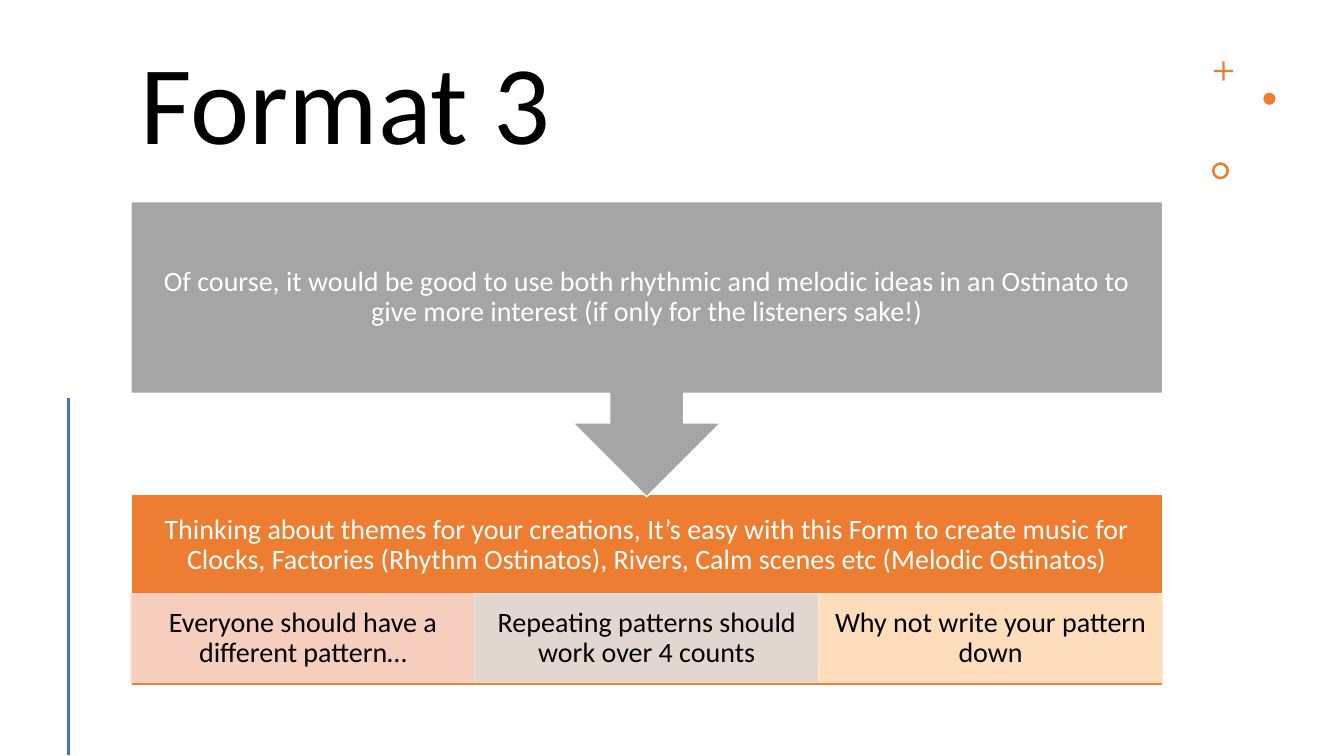
from lxml import etree
from pptx import Presentation
from pptx.dml.color import RGBColor
from pptx.enum.shapes import MSO_CONNECTOR, MSO_SHAPE as Preset
from pptx.enum.text import MSO_ANCHOR as Anchor, PP_ALIGN as Align
from pptx.oxml.ns import qn
from pptx.util import Inches, Pt

WHITE = RGBColor(0xFF, 0xFF, 0xFF)
BLACK = RGBColor(0, 0, 0)
ORANGE = RGBColor(0xED, 0x7D, 0x31)
GREY = RGBColor(0xA5, 0xA5, 0xA5)
BLUE = RGBColor(0x44, 0x72, 0xC4)
PINK = RGBColor(0xF8, 0xD7, 0xCE)
PALE_GREY = RGBColor(0xE1, 0xE1, 0xE1)
CREAM = RGBColor(0xFF, 0xE8, 0xCC)

LEFT, WIDTH = 1.3, 10.23
THEMES = ("Thinking about themes for your creations, It’s easy with this Form to create music for "
          "Clocks, Factories (Rhythm Ostinatos), Rivers, Calm scenes etc (Melodic Ostinatos)")
IDEAS = ("Of course, it would be good to use both rhythmic and melodic ideas in an Ostinato to "
         "give more interest (if only for the listeners sake!)")
TIPS = [
    ("Everyone should have a different pattern…", PINK),
    ("Repeating patterns should work over 4 counts", PALE_GREY),
    ("Why not write your pattern down", CREAM),
]


def write(shape, text, size, color, align, insets):
    """Fill the shape with one paragraph; insets are left, top, right, bottom in inches."""
    frame = shape.text_frame
    frame.word_wrap = True
    frame.vertical_anchor = Anchor.MIDDLE
    frame.margin_left, frame.margin_top, frame.margin_right, frame.margin_bottom = map(Inches, insets)
    para = frame.paragraphs[0]
    para.text = text
    para.alignment = align
    para.line_spacing = 0.9
    para.font.name = "Calibri"
    para.font.size = Pt(size)
    para.font.color.rgb = color


def add_filled(slide, preset, left, top, width, height, fill, outline=None):
    shape = slide.shapes.add_shape(preset, Inches(left), Inches(top), Inches(width), Inches(height))
    shape.shadow.inherit = False
    shape.fill.solid()
    shape.fill.fore_color.rgb = fill
    if outline is None:
        shape.line.fill.background()
    else:
        shape.line.color.rgb = outline
        shape.line.width = Pt(1)
    return shape


def set_opacity(shape, percent):
    """Apply the opacity to both fill and outline."""
    for color in shape._element.spPr.iter(qn("a:srgbClr")):
        etree.SubElement(color, qn("a:alpha"), val=str(percent * 1000))


def add_title(slide):
    box = slide.shapes.add_textbox(Inches(LEFT), Inches(0.42), Inches(WIDTH), Inches(1.31))
    write(box, "Format 3", 80, BLACK, Align.LEFT, (0.1, 0.05, 0.1, 0.05))


def add_ornaments(slide):
    plus = add_filled(slide, Preset.CROSS, 12.04, 0.61, 0.19, 0.19, ORANGE)
    plus.adjustments[0] = 0.44
    add_filled(slide, Preset.OVAL, 12.53, 0.92, 0.12, 0.12, ORANGE)
    ring = add_filled(slide, Preset.DONUT, 12.02, 1.61, 0.17, 0.17, ORANGE)
    ring.adjustments[0] = 0.15


def add_side_line(slide):
    line = slide.shapes.add_connector(
        MSO_CONNECTOR.STRAIGHT, Inches(0.68), Inches(3.95), Inches(0.68), Inches(7.49))
    line.line.color.rgb = BLUE
    line.line.width = Pt(2)
    etree.SubElement(line._element.spPr, qn("a:effectLst"))


def add_themes_panel(slide):
    panel = add_filled(slide, Preset.RECTANGLE, LEFT, 4.9, WIDTH, 1.9, ORANGE, WHITE)
    write(panel, THEMES, 20, WHITE, Align.CENTER, (0.16, 0.16, 0.16, 1.03))
    tile_width = WIDTH / len(TIPS)
    for index, (tip, color) in enumerate(TIPS):
        tile = add_filled(slide, Preset.RECTANGLE, LEFT + index * tile_width, 5.89,
                          tile_width, 0.88, color, color)
        set_opacity(tile, 90)
        write(tile, tip, 20, BLACK, Align.CENTER, (0.16, 0.03, 0.16, 0.03))


def add_ideas_callout(slide):
    callout = add_filled(slide, Preset.DOWN_ARROW_CALLOUT, LEFT, 2, WIDTH, 2.93, GREY, WHITE)
    write(callout, IDEAS, 20, WHITE, Align.CENTER, (0.16, 0.16, 0.16, 0.16))


def main():
    deck = Presentation()
    deck.slide_width, deck.slide_height = Inches(13.33), Inches(7.5)
    slide = deck.slides.add_slide(deck.slide_layouts[6])
    add_title(slide)
    add_ornaments(slide)
    add_side_line(slide)
    add_themes_panel(slide)
    add_ideas_callout(slide)
    deck.save("out.pptx")


if __name__ == "__main__":
    main()
